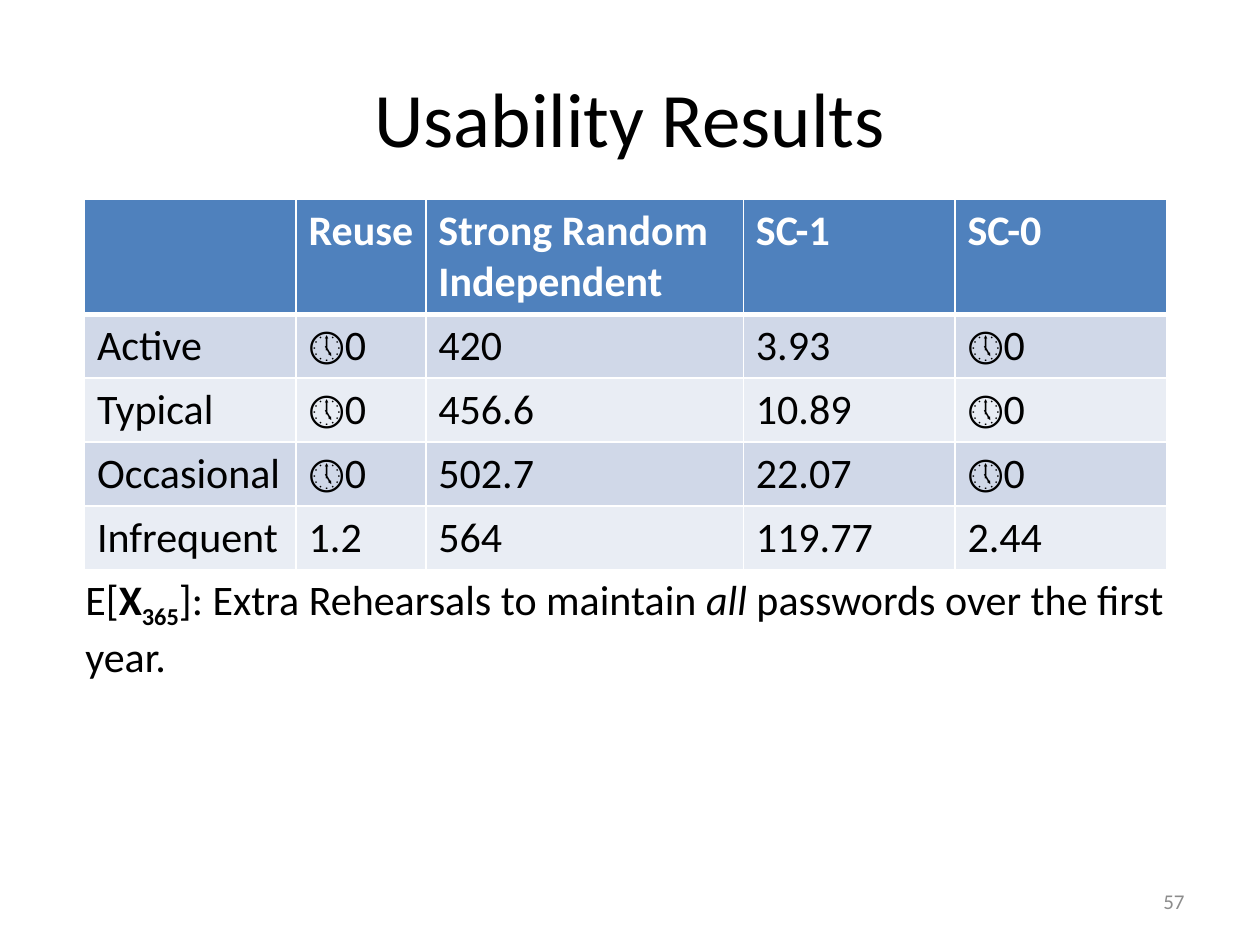
from dataclasses import dataclass

from lxml import etree
from pptx import Presentation
from pptx.dml.color import RGBColor
from pptx.enum.text import MSO_ANCHOR, PP_ALIGN
from pptx.oxml.ns import qn
from pptx.util import Inches, Pt

LEFT, CENTER, RIGHT = PP_ALIGN.LEFT, PP_ALIGN.CENTER, PP_ALIGN.RIGHT
TOP, MIDDLE = MSO_ANCHOR.TOP, MSO_ANCHOR.MIDDLE

FONT = "Calibri"
WHITE, BLACK, GRAY = "FFFFFF", "000000", "8C8C8C"
HEADER_FILL = "4F81BD"
BAND_FILLS = ("D0D8E8", "E9EDF4")

COL_WIDTHS = (1.68, 1.03, 2.52, 1.68, 1.68)
HEADER_HEIGHT, ROW_HEIGHT = 0.82, 0.46
ROWS = (
    ("", "Reuse", "Strong Random Independent", "SC-1", "SC-0"),
    ("Active", "🕔0", "420", "3.93", "🕔0"),
    ("Typical", "🕔0", "456.6", "10.89", "🕔0"),
    ("Occasional", "🕔0", "502.7", "22.07", "🕔0"),
    ("Infrequent", "1.2", "564", "119.77", "2.44"),
)


@dataclass(frozen=True)
class Run:
    text: str
    bold: bool = False
    italic: bool = False
    baseline: int = 0


@dataclass(frozen=True)
class Label:
    box: tuple[float, float, float, float]
    runs: tuple[Run, ...]
    size: int = 24
    color: str = BLACK
    align: int = LEFT
    anchor: int = TOP


LABELS = (
    Label((0.5, 0.3, 9, 1.25), (Run("Usability Results"),), size=44, align=CENTER, anchor=MIDDLE),
    Label((7.17, 6.95, 2.33, 0.4), (Run("57"),), size=12, color=GRAY, align=RIGHT, anchor=MIDDLE),
    Label((0.58, 4.5, 9.17, 0.91), (
        Run("E["),
        Run("X", bold=True),
        Run("365", bold=True, baseline=-25),
        Run("]: Extra Rehearsals to maintain "),
        Run("all", italic=True),
        Run(" passwords over the first year."),
    )),
)


def rgb(color: str) -> RGBColor:
    return RGBColor.from_string(color)


def add_text(p, text: str, *, size=24, color=BLACK, bold=False, italic=False, baseline=0) -> None:
    r = p.add_run()
    r.text = text
    r.font.name = FONT
    r.font.size = Pt(size)
    r.font.bold = bold
    r.font.italic = italic
    r.font.color.rgb = rgb(color)
    if baseline:
        r.font._element.set("baseline", str(baseline * 1000))


def add_label(s, label: Label) -> None:
    tf = s.shapes.add_textbox(*map(Inches, label.box)).text_frame
    tf.word_wrap = True
    tf.vertical_anchor = label.anchor
    p = tf.paragraphs[0]
    p.alignment = label.align
    for run in label.runs:
        add_text(p, run.text, size=label.size, color=label.color,
                 bold=run.bold, italic=run.italic, baseline=run.baseline)


def set_borders(cell, top: int, bottom: int) -> None:
    tcPr = cell._tc.get_or_add_tcPr()
    for side, width in (("L", 1), ("R", 1), ("T", top), ("B", bottom)):
        ln = etree.SubElement(tcPr, qn(f"a:ln{side}"), w=str(Pt(width)))
        fill = etree.SubElement(ln, qn("a:solidFill"))
        etree.SubElement(fill, qn("a:srgbClr"), val=WHITE)


def add_results_table(s) -> None:
    heights = [HEADER_HEIGHT] + [ROW_HEIGHT] * (len(ROWS) - 1)
    table = s.shapes.add_table(
        len(ROWS), len(COL_WIDTHS), Inches(0.67), Inches(1.58),
        Inches(sum(COL_WIDTHS)), Inches(sum(heights)),
    ).table
    for column, width in zip(table.columns, COL_WIDTHS):
        column.width = Inches(width)
    for i, (row, height, texts) in enumerate(zip(table.rows, heights, ROWS)):
        row.height = Inches(height)
        header = i == 0
        for cell, text in zip(row.cells, texts):
            set_borders(cell, top=3 if i == 1 else 1, bottom=3 if header else 1)
            cell.fill.solid()
            cell.fill.fore_color.rgb = rgb(HEADER_FILL if header else BAND_FILLS[(i - 1) % 2])
            if text:
                add_text(cell.text_frame.paragraphs[0], text,
                         color=WHITE if header else BLACK, bold=header)


def main() -> None:
    prs = Presentation()
    prs.slide_width, prs.slide_height = Inches(10), Inches(7.5)
    s = prs.slides.add_slide(prs.slide_layouts[6])
    add_results_table(s)
    for label in LABELS:
        add_label(s, label)
    prs.save("out.pptx")


if __name__ == "__main__":
    main()
